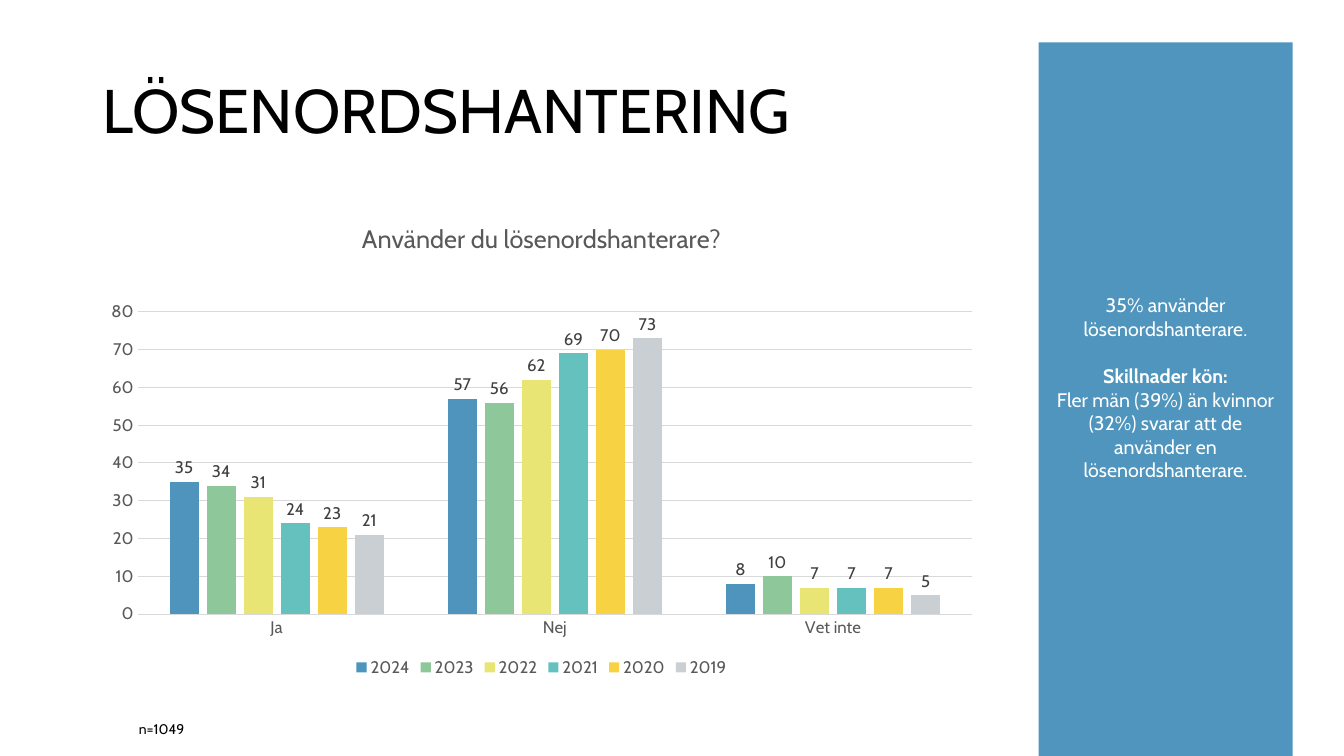
from dataclasses import dataclass

from lxml.etree import SubElement
from pptx import Presentation
from pptx.chart.data import CategoryChartData
from pptx.dml.color import RGBColor
from pptx.enum.chart import (XL_CHART_TYPE, XL_LABEL_POSITION,
                             XL_LEGEND_POSITION, XL_TICK_MARK)
from pptx.enum.shapes import MSO_SHAPE
from pptx.enum.text import MSO_ANCHOR, PP_ALIGN
from pptx.oxml.ns import qn
from pptx.util import Inches, Pt


@dataclass(frozen=True)
class Theme:
    font: str = "Cabin"
    black: str = "000000"
    white: str = "FFFFFF"
    axis_text: str = "595959"
    label_text: str = "404040"
    grid: str = "D9D9D9"
    panel: str = "4F95BD"
    title: int = 44
    chart_title: int = 18
    body: int = 14
    chart_text: int = 12
    note: int = 10


THEME = Theme()
ANSWERS = ("Ja", "Nej", "Vet inte")
YEARS = (
    ("2024", "4E94BD", (35, 57, 8)),
    ("2023", "8DC79A", (34, 56, 10)),
    ("2022", "E8E575", (31, 62, 7)),
    ("2021", "65C1BE", (24, 69, 7)),
    ("2020", "F7D243", (23, 70, 7)),
    ("2019", "CACFD3", (21, 73, 5)),
)


def rgb(color):
    return RGBColor.from_string(color)


def style(font, size, color, bold=False):
    font.name = THEME.font
    font.size = Pt(size)
    font.bold = bold
    font.color.rgb = rgb(color)


def add_run(p, text, size, color, bold=False):
    r = p.add_run()
    r.text = text
    style(r.font, size, color, bold)


def style_line(line):
    line.color.rgb = rgb(THEME.grid)
    line.width = Pt(0.75)


def set_plot_layout(chart, x, y, w, h):
    """Fix the inner plot area, in fractions of the chart box."""
    plot_area = chart._chartSpace.chart.plotArea
    layout = plot_area.find(qn("c:layout"))
    if layout is None:
        layout = SubElement(plot_area, qn("c:layout"))
        plot_area.insert(0, layout)
    manual = SubElement(layout, qn("c:manualLayout"))
    settings = (("layoutTarget", "inner"), ("xMode", "edge"), ("yMode", "edge"),
                ("x", x), ("y", y), ("w", w), ("h", h))
    for tag, value in settings:
        SubElement(manual, qn(f"c:{tag}")).set("val", str(value))


def fill_title(s, left, top, width, height):
    sp = s.shapes.title
    sp.left, sp.top, sp.width, sp.height = map(Inches, (left, top, width, height))
    tf = sp.text_frame
    tf.word_wrap = True
    tf.vertical_anchor = MSO_ANCHOR.MIDDLE
    p = tf.paragraphs[0]
    p.alignment = PP_ALIGN.LEFT
    p.line_spacing = 0.9
    add_run(p, "LÖSENORDSHANTERING", THEME.title, THEME.black)


def style_axes(chart):
    for axis in (chart.category_axis, chart.value_axis):
        axis.major_tick_mark = axis.minor_tick_mark = XL_TICK_MARK.NONE
        style(axis.tick_labels.font, THEME.chart_text, THEME.axis_text)
    style_line(chart.category_axis.format.line)
    values = chart.value_axis
    values.minimum_scale, values.maximum_scale, values.major_unit = 0, 80, 10
    values.format.line.fill.background()
    values.has_major_gridlines = True
    style_line(values.major_gridlines.format.line)


def add_answer_chart(s, left, top, width, height):
    data = CategoryChartData()
    data.categories = ANSWERS
    for year, _, values in YEARS:
        data.add_series(year, values)
    chart = s.shapes.add_chart(XL_CHART_TYPE.COLUMN_CLUSTERED,
                               *map(Inches, (left, top, width, height)),
                               data).chart
    style(chart.font, THEME.note, THEME.black)
    chart.has_title = True
    add_run(chart.chart_title.text_frame.paragraphs[0],
            "Använder du lösenordshanterare?", THEME.chart_title, THEME.axis_text)
    chart.chart_title.include_in_layout = False
    chart.has_legend = True
    chart.legend.position = XL_LEGEND_POSITION.BOTTOM
    chart.legend.include_in_layout = False
    style(chart.legend.font, THEME.chart_text, THEME.axis_text)
    style_axes(chart)
    set_plot_layout(chart, 0.05, 0.23, 0.93, 0.63)

    plot = chart.plots[0]
    plot.gap_width, plot.overlap, plot.vary_by_categories = 219, -27, False
    for series, (_, color, _) in zip(plot.series, YEARS):
        series.format.fill.solid()
        series.format.fill.fore_color.rgb = rgb(color)
        labels = series.data_labels
        labels.show_value = True
        labels.position = XL_LABEL_POSITION.OUTSIDE_END
        style(labels.font, THEME.chart_text, THEME.label_text)


def add_sample_note(s, left, top, width, height):
    sp = s.shapes.add_textbox(*map(Inches, (left, top, width, height)))
    tf = sp.text_frame
    tf.word_wrap = True
    add_run(tf.paragraphs[0], "n=1049", THEME.note, THEME.black)


def add_findings_panel(s, left, top, width, height):
    sp = s.shapes.add_shape(MSO_SHAPE.RECTANGLE,
                            *map(Inches, (left, top, width, height)))
    sp.shadow.inherit = False
    sp.fill.solid()
    sp.fill.fore_color.rgb = rgb(THEME.panel)
    sp.line.fill.background()
    tf = sp.text_frame
    tf.word_wrap = True
    tf.vertical_anchor = MSO_ANCHOR.MIDDLE
    tf.margin_bottom = Inches(0.28)
    summary, detail = tf.paragraphs[0], tf.add_paragraph()
    summary.alignment = detail.alignment = PP_ALIGN.CENTER
    detail.space_before = Pt(17)
    add_run(summary, "35% använder lösenordshanterare.", THEME.body, THEME.white)
    add_run(detail, "Skillnader kön:", THEME.body, THEME.white, bold=True)
    detail.add_line_break()
    add_run(detail, "Fler män (39%) än kvinnor (32%) svarar att de använder en "
            "lösenordshanterare.", THEME.body, THEME.white)


def main():
    prs = Presentation()
    prs.slide_width, prs.slide_height = Inches(13.33), Inches(7.5)
    s = prs.slides.add_slide(prs.slide_layouts.get_by_name("Title Only"))
    fill_title(s, 0.92, 0.4, 11.5, 1.45)
    add_answer_chart(s, 0.92, 2, 8.9, 4.76)
    add_sample_note(s, 1.28, 7.1, 9.9, 0.27)
    add_findings_panel(s, 10.3, 0.42, 2.52, 7.08)
    prs.save("out.pptx")


if __name__ == "__main__":
    main()
